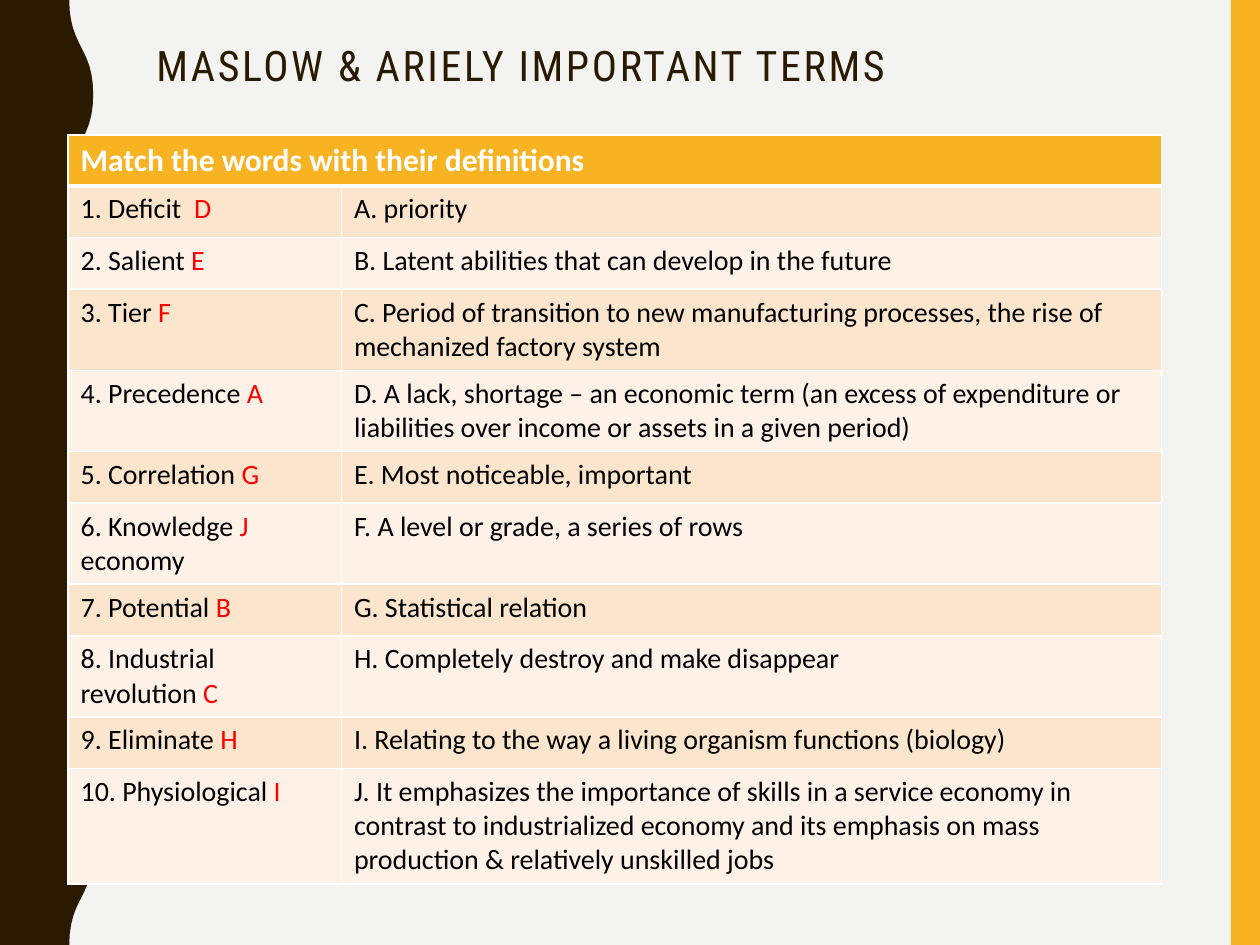
from lxml.etree import SubElement
from pptx import Presentation
from pptx.dml.color import RGBColor
from pptx.enum.shapes import MSO_SHAPE
from pptx.enum.text import MSO_ANCHOR, MSO_AUTO_SIZE, PP_ALIGN
from pptx.oxml.ns import qn
from pptx.util import Inches, Pt

DARK, GOLD, WHITE, BLACK, RED = "2A1A00", "F8B323", "FFFFFF", "000000", "FF0000"
BANDS = ["FCE5CD", "FEF2E8"]


def paint(target, color):
    target.solid()
    target.fore_color.rgb = RGBColor.from_string(color)


def fill_cell(cell, color, runs, size, bold=False, bottom=1):
    paint(cell.fill, color)
    para = cell.text_frame.paragraphs[0]
    for text, ink in runs:
        span = para.add_run()
        span.text = text
        for name, value in {"name": "Calibri", "size": Pt(size), "bold": bold}.items():
            setattr(span.font, name, value)
        paint(span.font.fill, ink)
    properties = cell._tc.get_or_add_tcPr()
    for position, (side, width) in enumerate({"L": 1, "R": 1, "T": 1, "B": bottom}.items()):
        line = SubElement(properties, qn(f"a:ln{side}"), w=str(Pt(width)))
        SubElement(SubElement(line, qn("a:solidFill")), qn("a:srgbClr"), val=WHITE)
        properties.insert(position, line)


deck = Presentation()
deck.slide_width, deck.slide_height = Inches(10), Inches(7.5)
page = deck.slides.add_slide(deck.slide_layouts[5])
paint(page.background.fill, "F3F3F2")

stripe = page.shapes.add_shape(MSO_SHAPE.RECTANGLE, Inches(9.77), 0, Inches(0.23), Inches(7.5))

inner, outer, half_wave, steps = 0.55, 0.74, 0.75, 12
edge = []
for bend in range(10):
    start, end = (inner, outer) if bend % 2 == 0 else (outer, inner)
    for step in range(1, steps + 1):
        t = step / steps
        x = start + (end - start) * (3 * t**2 - 2 * t**3)
        y = half_wave * (bend + 1.5 * t * (1 - t) + t**3)
        edge.append((Inches(x), Inches(y)))
builder = page.shapes.build_freeform(Inches(inner), 0)
builder.add_line_segments(edge + [(0, Inches(7.5)), (0, 0)], close=True)
wave = builder.convert_to_shape()

for shape, color in [(stripe, GOLD), (wave, DARK)]:
    paint(shape.fill, color)
    shape.line.fill.background()
    shape.shadow.inherit = False

title = page.shapes.title
place = {"left": 1.14, "top": 0.31, "width": 8.17, "height": 0.54}
for name, value in place.items():
    setattr(title, name, Inches(value))
frame = title.text_frame
frame.auto_size = MSO_AUTO_SIZE.NONE
frame.vertical_anchor = MSO_ANCHOR.TOP
para = frame.paragraphs[0]
para.alignment = PP_ALIGN.LEFT
para.line_spacing = 0.9
span = para.add_run()
span.text = "MASLOW & ARIELY IMPORTANT TERMS"
span.font.name, span.font.size = "Roboto Condensed", Pt(24)
paint(span.font.fill, DARK)
span.font._element.set("spc", "150")

terms = [
    ("1. Deficit  ", "D", "", "A. priority"),
    ("2. Salient ", "E", "", "B. Latent abilities that can develop in the future"),
    ("3. Tier ", "F", "", "C. Period of transition to new manufacturing processes, "
     "the rise of mechanized factory system"),
    ("4. Precedence ", "A", "", "D. A lack, shortage – an economic term (an excess of "
     "expenditure or liabilities over income or assets in a given period)"),
    ("5. Correlation ", "G", "", "E. Most noticeable, important"),
    ("6. Knowledge ", "J", " economy", "F. A level or grade, a series of rows"),
    ("7. Potential ", "B", "", "G. Statistical relation"),
    ("8. Industrial revolution ", "C", "", "H. Completely destroy and make disappear"),
    ("9. Eliminate ", "H", "", "I. Relating to the way a living organism functions (biology)"),
    ("10. Physiological ", "I", "", "J. It emphasizes the importance of skills in a service "
     "economy in contrast to industrialized economy and its emphasis on mass production "
     "& relatively unskilled jobs"),
]
table_frame = page.shapes.add_table(
    len(terms) + 1, 2, Inches(0.54), Inches(1.07), Inches(8.68), Inches(5.86))
table = table_frame.table
for column, width in zip(table.columns, [2.17, 6.51]):
    column.width = Inches(width)
for index, row in enumerate(table.rows):
    row.height = Inches(0.41 if index else 0.24)
table_frame.height = Inches(5.86)

table.cell(0, 0).merge(table.cell(0, 1))
heading = [("Match the words with their definitions", WHITE)]
fill_cell(table.cell(0, 0), GOLD, heading, 18, bold=True, bottom=3)
for index, (term, answer, rest, definition) in enumerate(terms):
    band = BANDS[index % 2]
    runs = [(term, BLACK), (answer, RED)] + ([(rest, BLACK)] if rest else [])
    fill_cell(table.cell(index + 1, 0), band, runs, 16)
    fill_cell(table.cell(index + 1, 1), band, [(definition, BLACK)], 16)

deck.save("out.pptx")
